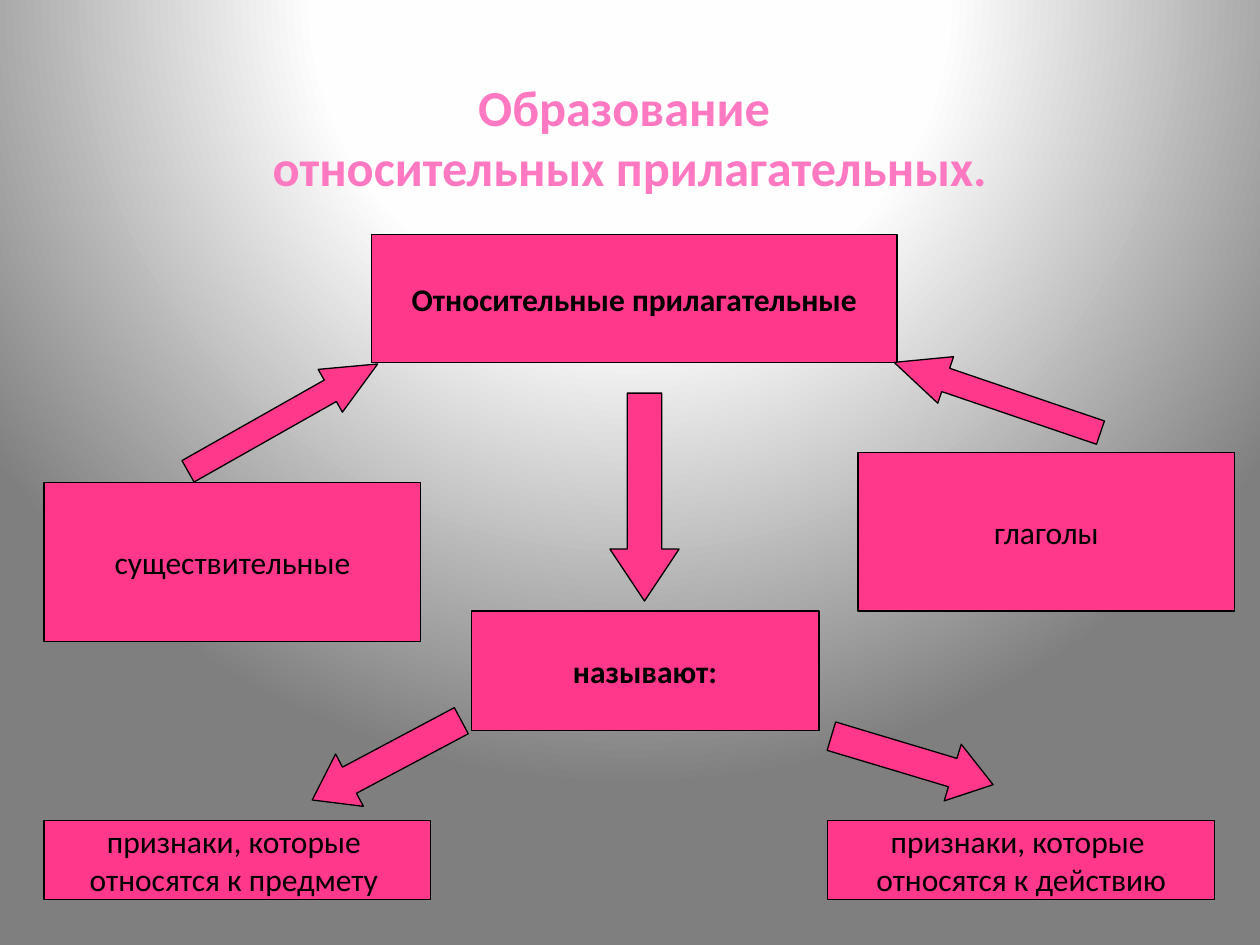
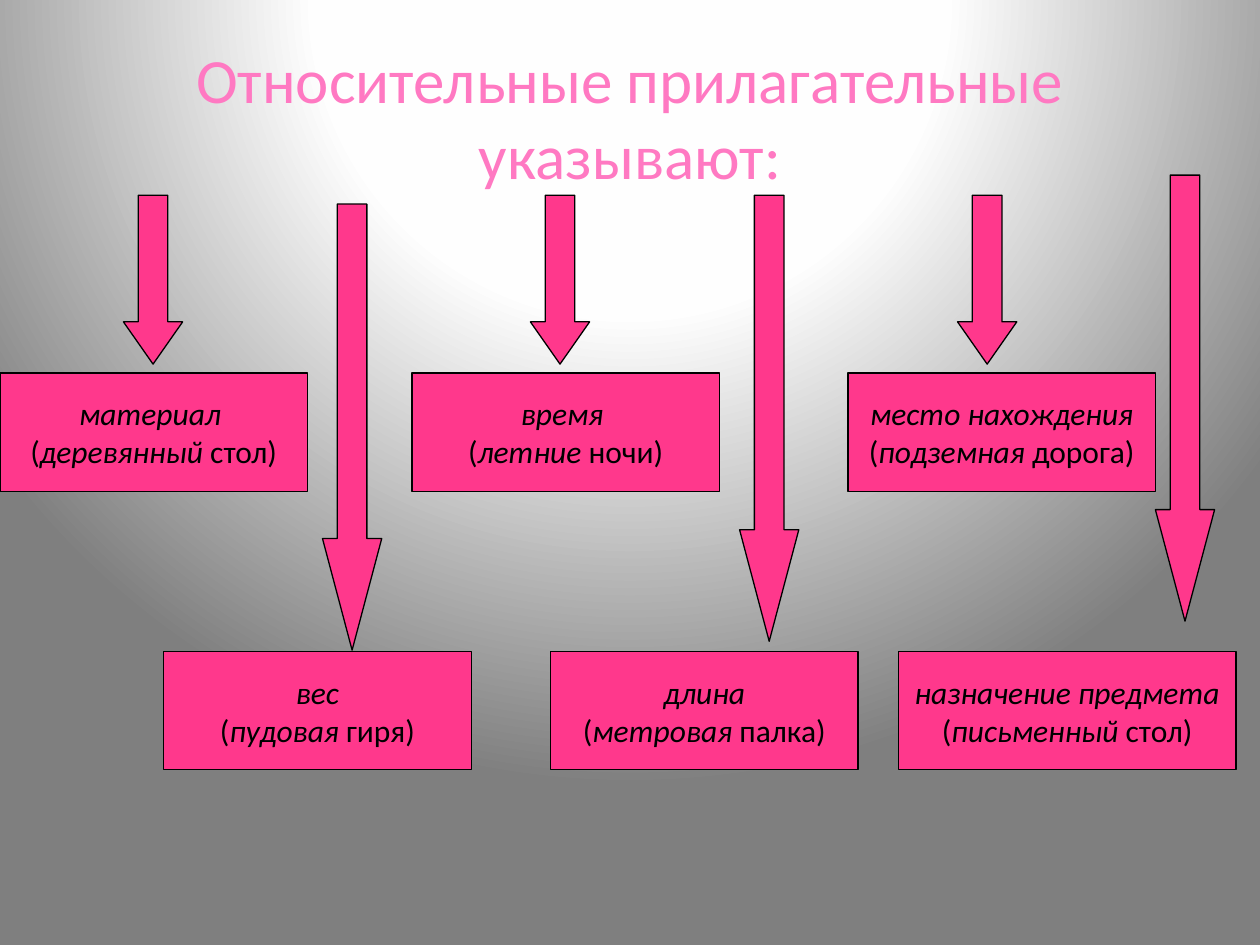
from lxml import etree
from pptx import Presentation
from pptx.dml.color import RGBColor
from pptx.enum.shapes import MSO_SHAPE
from pptx.enum.text import MSO_ANCHOR, MSO_AUTO_SIZE, PP_ALIGN
from pptx.oxml.ns import nsdecls, qn
from pptx.util import Inches, Pt

PINK = RGBColor(0xFF, 0x38, 0x8C)
LIGHT_PINK = RGBColor(0xFF, 0x79, 0xC2)
BLACK = RGBColor(0, 0, 0)
WHITE = RGBColor(0xFF, 0xFF, 0xFF)
NEAR_WHITE = RGBColor(0xFE, 0xFE, 0xFE)
GREY = RGBColor(0x7F, 0x7F, 0x7F)
GLOW_STOPS = ((0, WHITE), (40, NEAR_WHITE), (100, GREY))

COLUMNS, ROWS = 100, 75
FONT = "Calibri"


class Deck:
    """Shared style, the grid and the slide being built."""

    def __init__(self):
        self.presentation = Presentation()
        self.presentation.slide_width = Inches(10)
        self.presentation.slide_height = Inches(7.5)
        self.column = self.presentation.slide_width / COLUMNS
        self.row = self.presentation.slide_height / ROWS
        self.slide = None
        self.glow_background()

    def glow_background(self):
        master = self.presentation.slide_master
        master.background.fill.solid()
        background = master.element.find(".//" + qn("p:bgPr"))
        stops = "".join(
            f'<a:gs pos="{share * 1000}"><a:srgbClr val="{colour}"/></a:gs>'
            for share, colour in GLOW_STOPS
        )
        glow = etree.fromstring(
            f'<a:gradFill {nsdecls("a")} rotWithShape="1"><a:gsLst>{stops}</a:gsLst>'
            '<a:path path="circle"><a:fillToRect l="50000" t="-80000" '
            'r="50000" b="180000"/></a:path></a:gradFill>'
        )
        background.replace(background[0], glow)

    def frame(self, left, top, width, height):
        return [
            round(length)
            for length in (left * self.column, top * self.row,
                           width * self.column, height * self.row)
        ]

    def new_slide(self, heading, frame, size, bold=False):
        self.slide = self.presentation.slides.add_slide(
            self.presentation.slide_layouts[5])
        title = self.slide.shapes.title
        title.left, title.top, title.width, title.height = self.frame(*frame)
        text = title.text_frame
        text.text = heading
        text.auto_size = MSO_AUTO_SIZE.NONE
        text.vertical_anchor = MSO_ANCHOR.MIDDLE
        self.style(text.paragraphs[0], size, LIGHT_PINK, bold)

    def style(self, paragraph, size=18, colour=BLACK, bold=False):
        paragraph.alignment = PP_ALIGN.CENTER
        font = paragraph.font
        font.name, font.size, font.bold = FONT, Pt(size), bold
        font.color.rgb = colour

    def pink_shape(self, preset, frame):
        shape = self.slide.shapes.add_shape(preset, *self.frame(*frame))
        shape.shadow.inherit = False
        shape.fill.solid()
        shape.fill.fore_color.rgb = PINK
        shape.line.color.rgb = BLACK
        shape.line.width = Pt(0.75)
        return shape

    def box(self, wording, frame, bold=False):
        text = self.pink_shape(MSO_SHAPE.RECTANGLE, frame).text_frame
        text.text = wording
        text.word_wrap = False
        text.vertical_anchor = MSO_ANCHOR.MIDDLE
        for paragraph in text.paragraphs:
            self.style(paragraph, bold=bold)
        return text

    def meaning_box(self, meaning, adjective, noun, frame):
        text = self.box(meaning, frame)
        text.paragraphs[0].font.italic = True
        example = text.add_paragraph()
        self.style(example)
        for wording, italic in (("(", False), (adjective, True), (f" {noun})", False)):
            run = example.add_run()
            run.text = wording
            run.font.italic = italic

    def arrow(self, preset, frame, rotation=0):
        arrow = self.pink_shape(preset, frame)
        arrow.rotation = rotation
        # The head takes a quarter of the arrow's length
        length, thickness = max(frame[2:]), min(frame[2:])
        arrow.adjustments[0] = 0.5
        arrow.adjustments[1] = length / thickness / 4


def formation_slide(deck):
    deck.new_slide("Образование \vотносительных прилагательных.",
                   (5.1, 5.9, 89.8, 9.8), 28.8, bold=True)

    # Sources of the adjectives
    deck.box("Относительные прилагательные", (29.5, 18.6, 41.7, 10.2), bold=True)
    for left, top, rotation in ((70.5, 29.6, 18.8), (13.8, 31.2, 150.5)):
        deck.arrow(MSO_SHAPE.LEFT_ARROW, (left, top, 17.3, 3.9), rotation)
    for source, left, top in (("существительные", 3.5, 38.3), ("глаголы", 68.1, 35.9)):
        deck.box(source, (left, top, 29.9, 12.6))

    # What the adjectives name
    deck.box("называют:", (37.4, 48.5, 27.6, 9.5), bold=True)
    for target, left in (("предмету ", 3.5), ("действию", 65.7)):
        deck.box(f"признаки, которые \nотносятся к {target}", (left, 65.1, 30.7, 6.3))
    deck.arrow(MSO_SHAPE.DOWN_ARROW, (48.4, 31.2, 5.5, 16.5))
    for left, rotation in ((24, 332), (65.7, 196.7)):
        deck.arrow(MSO_SHAPE.LEFT_ARROW, (left, 58, 13.4, 4.7), rotation)


def meanings_slide(deck):
    deck.new_slide("Относительные прилагательные\vуказывают:", (5, 3, 90, 12.5), 36)

    # Upper and lower rows of meanings: wording, left, width
    upper = (
        ("материал ", "деревянный", "стол", 0, 24.4),
        ("время ", "летние", "ночи", 32.7, 24.4),
        ("место нахождения", "подземная", "дорога", 67.3, 24.4),
    )
    lower = (
        ("вес", "пудовая", "гиря", 13, 24.4),
        ("длина", "метровая", "палка", 43.7, 24.4),
        ("назначение предмета", "письменный", "стол", 71.3, 26.8),
    )
    for top, meanings in ((29.6, upper), (51.7, lower)):
        for meaning, adjective, noun, left, width in meanings:
            deck.meaning_box(meaning, adjective, noun, (left, top, width, 9.4))

    # Short arrows to the upper row, long ones to the lower row
    short, long = 13.4, 35.4
    for left, top, length in (
        (9.8, 15.5, short), (42.1, 15.5, short), (76, 15.5, short),
        (25.6, 16.2, long), (58.7, 15.5, long), (91.7, 13.9, long),
    ):
        deck.arrow(MSO_SHAPE.DOWN_ARROW, (left, top, 4.7, length))


def main():
    deck = Deck()
    formation_slide(deck)
    meanings_slide(deck)
    deck.presentation.save("out.pptx")


if __name__ == "__main__":
    main()
